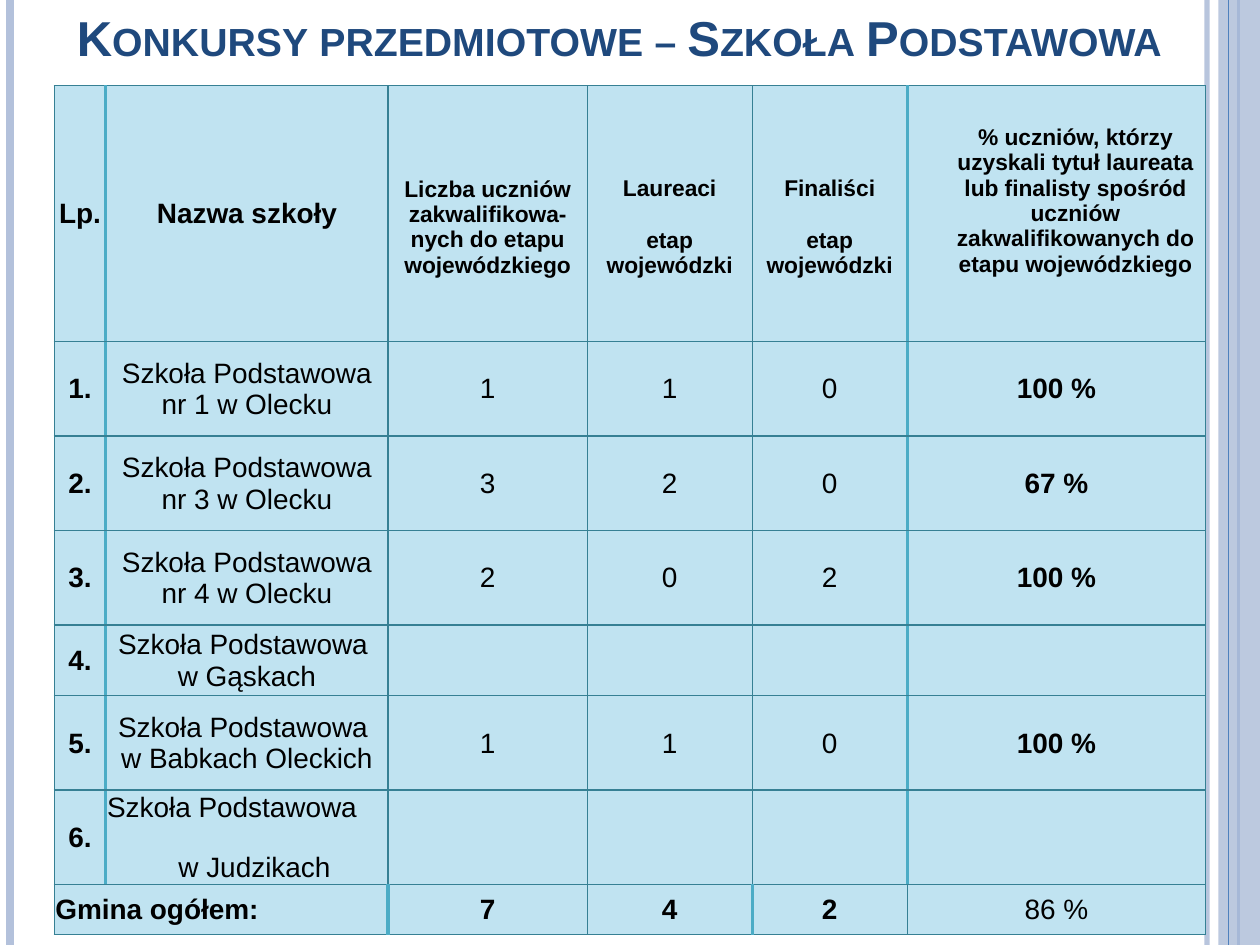
from dataclasses import dataclass

from lxml.etree import SubElement
from pptx import Presentation
from pptx.dml.color import RGBColor
from pptx.enum.shapes import MSO_CONNECTOR as Conn, MSO_SHAPE as Shape
from pptx.enum.text import MSO_ANCHOR as Anchor, PP_ALIGN as Align
from pptx.oxml.ns import qn
from pptx.util import Inches, Pt


@dataclass(frozen=True)
class Theme:
    font: str = "Arial"
    ink: str = "000000"
    title: str = "1F497D"
    cell: str = "C0E3F1"
    grid: str = "368094"
    heavy: str = "4BACC6"
    pale: str = "B3C1DB"
    blue: str = "4F81BD"
    title_size: int = 28
    body_size: int = 16
    head_size: int = 13
    thin: float = 0.75
    thick: float = 2


T = Theme()
COLS = [0.41, 2.24, 1.58, 1.31, 1.23, 2.37]
ROWS = [2.03, 0.75, 0.75, 0.75, 0.56, 0.75, 0.75, 0.4]
HEADS = [
    "Lp.", "Nazwa szkoły",
    "Liczba uczniów zakwalifikowa-nych do etapu wojewódzkiego",
    "Laureaci\netap wojewódzki", "Finaliści\netap wojewódzki",
    "% uczniów, którzy uzyskali tytuł laureata lub finalisty spośród "
    "uczniów zakwalifikowanych do etapu wojewódzkiego",
]
SCHOOLS = [
    ("Szkoła Podstawowa nr 1 w Olecku", "1", "1", "0", "100 %"),
    ("Szkoła Podstawowa nr 3 w Olecku", "3", "2", "0", "67 %"),
    ("Szkoła Podstawowa nr 4 w Olecku", "2", "0", "2", "100 %"),
    ("Szkoła Podstawowa \nw Gąskach", "", "", "", ""),
    ("Szkoła Podstawowa \nw Babkach Oleckich", "1", "1", "0", "100 %"),
    ("Szkoła Podstawowa\nw Judzikach", "", "", "", ""),
]
TOTAL = ["Gmina ogółem:", "", "7", "4", "2", "86 %"]


def write(frame, text, size=T.body_size, color=T.ink, bold=False,
          align=Align.CENTER, gap=0, indent=0, caps=False):
    """Fill a text frame; gap is the space before later paragraphs."""
    for i, line in enumerate(text.split("\n")):
        para = frame.paragraphs[0] if i == 0 else frame.add_paragraph()
        para.alignment = align
        if i and gap:
            para.space_before = Pt(gap)
        if indent:
            para._p.get_or_add_pPr().set("marL", str(Inches(indent)))
        run = para.add_run()
        run.text = line
        font = run.font
        font.name, font.size, font.bold = T.font, Pt(size), bold
        font.color.rgb = RGBColor.from_string(color)
        if caps:
            run._r.get_or_add_rPr().set("cap", "small")


def fade(fill, color, alpha):
    fill.solid()
    fill.fore_color.rgb = RGBColor.from_string(color)
    tint = fill._xPr.find(qn("a:solidFill"))[0]
    SubElement(tint, qn("a:alpha"), val=str(alpha * 1000))


def rule(slide, x, top, height, color, width, alpha=100):
    line = slide.shapes.add_connector(
        Conn.STRAIGHT, Inches(x), Inches(top), Inches(x), Inches(top + height))
    line.line.width = Pt(width)
    fade(line.line.fill, color, alpha)
    SubElement(line._element.spPr, qn("a:effectLst"))


def frame_page(slide, left, top, width, height):
    """Draw the vertical stripes along both sides of the page."""
    right = left + width
    rule(slide, right - 0.42, top, height, T.pale, 3, 93)
    rule(slide, left + 0.08, top, height, T.pale, 4.5)
    rule(slide, right - 0.17, top, height, T.blue, 1.5)
    band = slide.shapes.add_shape(Shape.RECTANGLE, Inches(right - 0.33),
                                  Inches(top), Inches(0.33), Inches(height))
    band.shadow.inherit = False
    band.line.fill.background()
    fade(band.fill, T.pale, 87)
    rule(slide, right - 0.25, top, height, T.blue, 0.75)


def place_title(slide, text, left, top, width, height):
    title = slide.shapes.title
    title.left, title.top = Inches(left), Inches(top)
    title.width, title.height = Inches(width), Inches(height)
    title.text_frame.vertical_anchor = Anchor.BOTTOM
    write(title.text_frame, text, size=T.title_size, color=T.title,
          bold=True, align=Align.LEFT, caps=True)


def edge(cell, left, right):
    """Border a cell; left and right say which sides are heavy."""
    props = cell._tc.get_or_add_tcPr()
    sides = [("L", left), ("R", right), ("T", False), ("B", False)]
    for i, (side, heavy) in enumerate(sides):
        width = Pt(T.thick if heavy else T.thin)
        line = SubElement(props, qn(f"a:ln{side}"), w=str(width))
        fill = SubElement(line, qn("a:solidFill"))
        SubElement(fill, qn("a:srgbClr"), val=T.heavy if heavy else T.grid)
        props.remove(line)
        props.insert(i, line)


def style(cell, left, right):
    cell.fill.solid()
    cell.fill.fore_color.rgb = RGBColor.from_string(T.cell)
    cell.vertical_anchor = Anchor.MIDDLE
    cell.margin_left = cell.margin_right = cell.margin_top = Inches(0.01)
    cell.margin_bottom = 0
    edge(cell, left, right)


def fill_head(table):
    for col, text in enumerate(HEADS):
        cell, last = table.cell(0, col), col == len(HEADS) - 1
        small = col > 1
        if last:
            cell.margin_bottom = Inches(0.21)
        elif small:
            cell.margin_top = Inches(0.22)
        write(cell.text_frame, text, bold=True, gap=15,
              size=T.head_size if small else T.body_size,
              indent=0.3 if last else 0)


def fill_schools(table):
    for row, school in enumerate(SCHOOLS, 1):
        for col, text in enumerate((f"{row}.", *school)):
            if text:
                write(table.cell(row, col).text_frame, text,
                      bold=col in (0, 5))
    name = table.cell(len(SCHOOLS), 1).text_frame.paragraphs
    name[0].alignment = Align.LEFT
    name[1].space_before = Pt(17)
    name[1]._p.get_or_add_pPr().set("marL", str(Inches(0.12)))


def fill_total(table):
    row = len(ROWS) - 1
    table.cell(row, 0).merge(table.cell(row, 1))
    for col, text in enumerate(TOTAL):
        if text:
            write(table.cell(row, col).text_frame, text, bold=col < 5,
                  align=Align.CENTER if col else Align.LEFT)


def place_table(slide, left, top):
    table = slide.shapes.add_table(
        len(ROWS), len(COLS), Inches(left), Inches(top),
        Inches(sum(COLS)), Inches(sum(ROWS))).table
    table.first_row = table.horz_banding = False
    for col, width in zip(table.columns, COLS):
        col.width = Inches(width)
    for i, (row, height) in enumerate(zip(table.rows, ROWS)):
        row.height = Inches(height)
        heavy = (2, 4) if i == len(ROWS) - 1 else (1, 5)
        for j, cell in enumerate(row.cells):
            style(cell, j in heavy, j + 1 in heavy)
    fill_head(table)
    fill_schools(table)
    fill_total(table)


def main():
    deck = Presentation()
    deck.slide_width, deck.slide_height = Inches(10), Inches(7.5)
    slide = deck.slides.add_slide(deck.slide_layouts[5])
    frame_page(slide, 0, 0, 10, 7.5)
    place_title(slide, "Konkursy przedmiotowe – Szkoła Podstawowa",
                0.51, -0.19, 9.07, 0.77)
    place_table(slide, 0.43, 0.68)
    deck.save("out.pptx")


if __name__ == "__main__":
    main()
